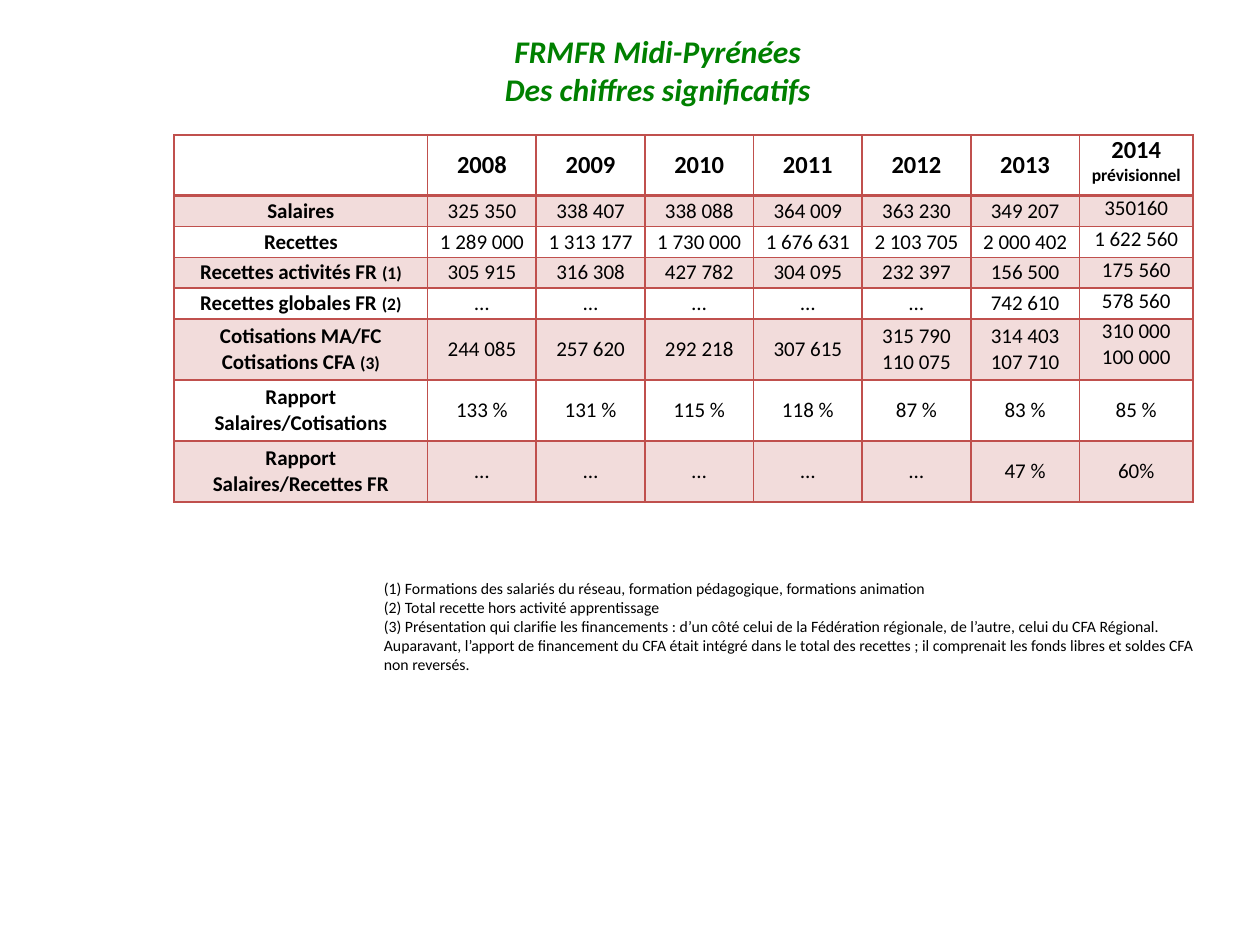
from lxml import etree
from pptx import Presentation
from pptx.dml.color import RGBColor
from pptx.enum.text import MSO_ANCHOR, PP_ALIGN
from pptx.oxml.ns import qn
from pptx.util import Cm, Pt

CENTER, LEFT = PP_ALIGN.CENTER, PP_ALIGN.LEFT
TOP, MIDDLE = MSO_ANCHOR.TOP, MSO_ANCHOR.MIDDLE

TITLE = "FRMFR Midi-Pyrénées\nDes chiffres significatifs"
# "\n" starts a paragraph, "|" switches to the small size
HEAD = ["", "2008", "2009", "2010", "2011", "2012", "2013", "2014\n|prévisionnel"]
ROWS = [
    ["Salaires", "325 350", "338 407", "338 088", "364 009", "363 230", "349 207", "350160"],
    ["Recettes", "1 289 000", "1 313 177", "1 730 000", "1 676 631", "2 103 705",
     "2 000 402", "1 622 560"],
    ["Recettes activités FR |(1)", "305 915", "316 308", "427 782", "304 095", "232 397",
     "156 500", "175 560"],
    ["Recettes globales FR |(2)", "…", "…", "…", "…", "…", "742 610", "578 560"],
    ["Cotisations MA/FC\nCotisations CFA |(3)", "244 085", "257 620", "292 218", "307 615",
     "315 790\n110 075", "314 403\n107 710", "310 000\n100 000"],
    ["Rapport\nSalaires/Cotisations", "133 %", "131 %", "115 %", "118 %", "87 %", "83 %", "85 %"],
    ["Rapport\nSalaires/Recettes FR", "…", "…", "…", "…", "…", "47 %", "60%"],
]
NOTES = "\n".join([
    "(1) Formations des salariés du réseau, formation pédagogique, formations animation",
    "(2) Total recette hors activité apprentissage",
    "(3) Présentation qui clarifie les financements : d’un côté celui de la Fédération "
    "régionale, de l’autre, celui du CFA Régional.",
    "Auparavant, l’apport de financement du CFA était intégré dans le total des recettes ; "
    "il comprenait les fonds libres et soldes CFA non reversés.",
])

BLACK = RGBColor(0, 0, 0)
THEME = {
    "red": "C0504D",
    "tint": 20,
    "small": Pt(10),
    "title": {"size": Pt(18), "bold": True, "italic": True, "color": RGBColor(0, 128, 0)},
    "head": {"size": Pt(14), "bold": True, "color": BLACK},
    "label": {"size": Pt(12), "bold": True, "color": BLACK},
    "value": {"size": Pt(12), "bold": False, "color": BLACK},
    "notes": {"size": Pt(9), "color": BLACK},
}
FACE = "Calibri"
WIDTHS = [5.11] + [2.19] * 6 + [2.29]
TALL, LOW = 1.23, 0.62
INSETS = {"margin_left": Cm(0.18), "margin_right": Cm(0.18), "margin_top": 0, "margin_bottom": 0}


def write(frame, text, style, align):
    for i, line in enumerate(text.split("\n")):
        para = frame.add_paragraph() if i else frame.paragraphs[0]
        para.alignment = align
        for j, part in enumerate(line.split("|")):
            if not part:
                continue
            run = para.add_run()
            run.text = part
            run.font.name = FACE
            for key, val in style.items():
                if key == "color":
                    run.font.color.rgb = val
                else:
                    setattr(run.font, key, val)
            if j:
                run.font.size = THEME["small"]


def add_text(slide, box, text, style, align, anchor):
    frame = slide.shapes.add_textbox(*map(Cm, box)).text_frame
    frame.word_wrap = True
    frame.vertical_anchor = anchor
    write(frame, text, style, align)


def add_edges(cell, widths):
    props = cell._tc.get_or_add_tcPr()
    for side, width in widths.items():
        line = etree.SubElement(props, qn("a:ln" + side), w=str(Pt(width)))
        solid = etree.SubElement(line, qn("a:solidFill"))
        etree.SubElement(solid, qn("a:srgbClr"), val=THEME["red"])


def fill_cell(cell, shaded):
    if not shaded:
        cell.fill.background()
        return
    cell.fill.solid()
    cell.fill.fore_color.rgb = RGBColor.from_string(THEME["red"])
    color = cell._tc.tcPr.find(qn("a:solidFill")).find(qn("a:srgbClr"))
    etree.SubElement(color, qn("a:alpha"), val=str(THEME["tint"] * 1000))


def add_grid(slide):
    data = [HEAD] + ROWS
    highs = [LOW if 0 < r < 5 else TALL for r in range(len(data))]
    box = 3.51, 2.72, sum(WIDTHS), sum(highs)
    table = slide.shapes.add_table(len(data), len(HEAD), *map(Cm, box)).table
    table.first_row = table.horz_banding = False
    for col, width in zip(table.columns, WIDTHS):
        col.width = Cm(width)
    for r, (row, high) in enumerate(zip(data, highs)):
        table.rows[r].height = Cm(high)
        for c, text in enumerate(row):
            cell = table.cell(r, c)
            for key, val in INSETS.items():
                setattr(cell, key, val)
            last = c == len(HEAD) - 1
            cell.vertical_anchor = TOP if last and r < 6 else MIDDLE
            style = "head" if r == 0 else "value" if c else "label"
            write(cell.text_frame, text, THEME[style], CENTER)
            add_edges(cell, {"L": 1, "R": 1, "T": 2 if r == 1 else 1, "B": 1 if r else 2})
            fill_cell(cell, r % 2 == 1)


def main():
    deck = Presentation()
    deck.slide_width, deck.slide_height = Cm(25.4), Cm(19.05)
    slide = deck.slides.add_slide(deck.slide_layouts[6])
    add_text(slide, (6.91, 0.53, 12.7, 1.8), TITLE, THEME["title"], CENTER, TOP)
    add_grid(slide)
    add_text(slide, (7.49, 11.53, 17.22, 2.18), NOTES, THEME["notes"], LEFT, MIDDLE)
    deck.save("out.pptx")


if __name__ == "__main__":
    main()
